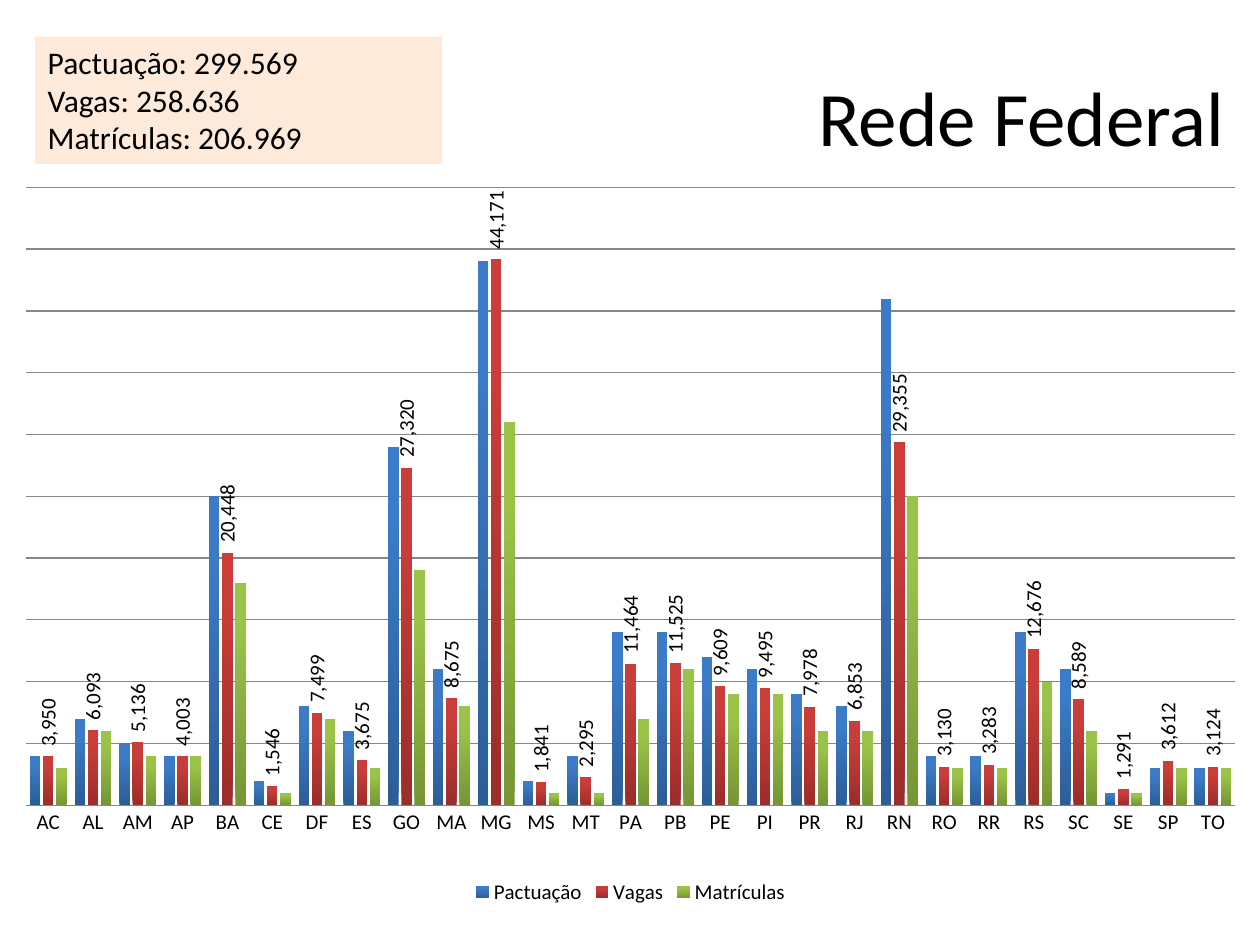
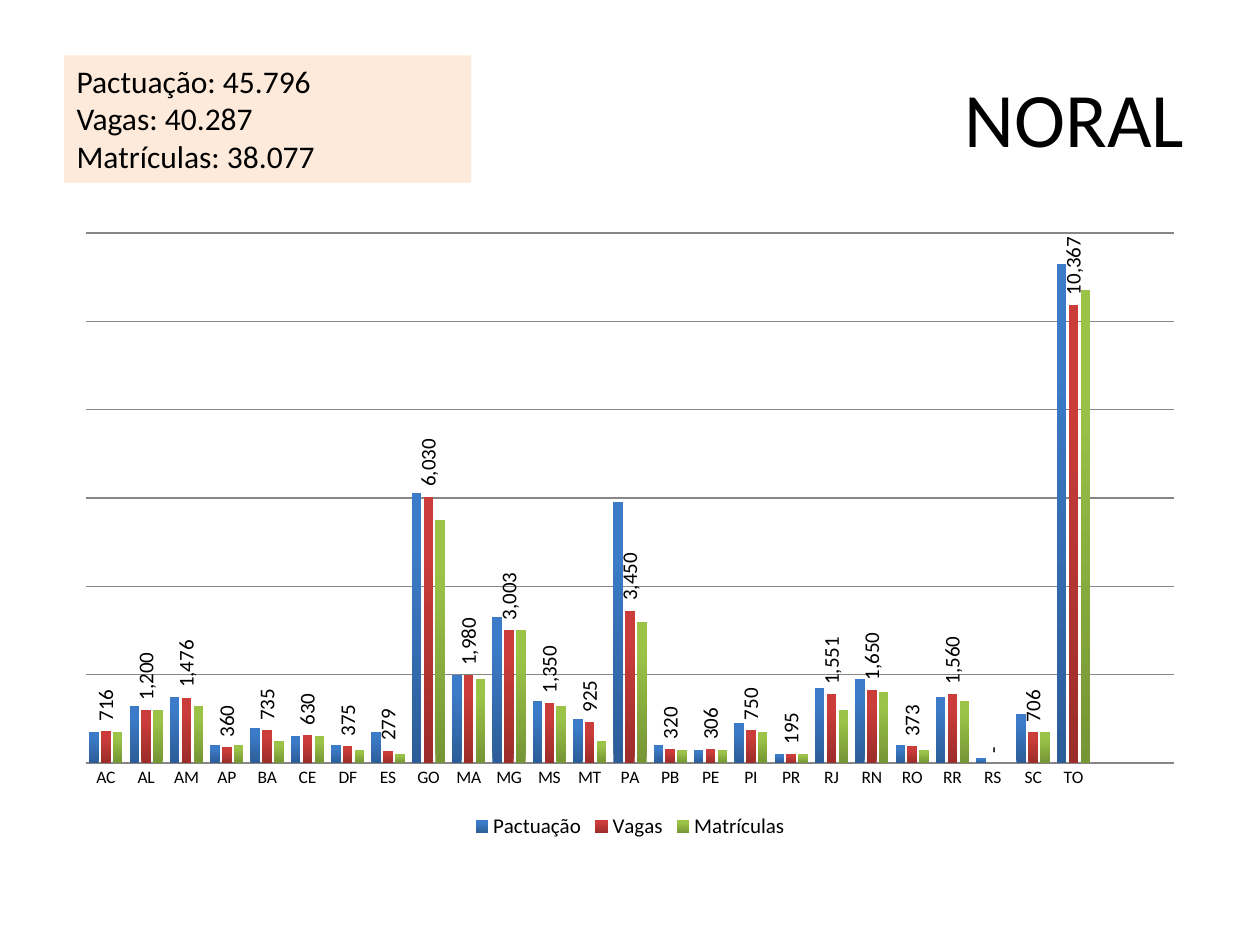
from dataclasses import dataclass

from pptx import Presentation
from pptx.chart.data import CategoryChartData
from pptx.dml.color import RGBColor
from pptx.enum.chart import XL_CHART_TYPE, XL_LABEL_POSITION, XL_LEGEND_POSITION, XL_TICK_MARK
from pptx.enum.text import MSO_ANCHOR, PP_ALIGN
from pptx.oxml import parse_xml
from pptx.oxml.ns import nsdecls, qn
from pptx.util import Pt


@dataclass(frozen=True)
class Theme:
    font: str = "Calibri"
    text: str = "000000"
    box_fill: str = "FDEADA"
    grid: str = "868686"
    # Bottom and top colour of the bars of each series
    bars: tuple = (("2C5D98", "3C7BC7"), ("9B2D2A", "CB3D3A"), ("769535", "9BC348"))
    title_size: int = 44
    box_size: int = 18
    label_size: int = 12
    small_size: int = 10
    number_format: str = r'_-* #,##0_-;\-* #,##0_-;_-* "-"??_-;_-@_-'


SERIES_NAMES = ("Pactuação", "Vagas", "Matrículas")
TITLE_ONLY = 5
BOX_SIZE = (232.5, 72.7)

FEDERAL_STATES = ("AC AL AM AP BA CE DF ES GO MA MG MS MT PA PB PE PI PR RJ RN "
                  "RO RR RS SC SE SP TO").split()
FEDERAL_VALUES = (
    (4000, 7000, 5000, 4000, 25000, 2000, 8000, 6000, 29000, 11000, 44000, 2000, 4000, 14000,
     14000, 12000, 11000, 9000, 8000, 41000, 4000, 4000, 14000, 11000, 1000, 3000, 3000),
    (3950, 6093, 5136, 4003, 20448, 1546, 7499, 3675, 27320, 8675, 44171, 1841, 2295, 11464,
     11525, 9609, 9495, 7978, 6853, 29355, 3130, 3283, 12676, 8589, 1291, 3612, 3124),
    (3000, 6000, 4000, 4000, 18000, 1000, 7000, 3000, 19000, 8000, 31000, 1000, 1000, 7000,
     11000, 9000, 9000, 6000, 6000, 25000, 3000, 3000, 10000, 6000, 1000, 3000, 3000),
)

# The axis keeps two free places on the right
NORAL_STATES = [state for state in FEDERAL_STATES if state not in ("SE", "SP")] + ["", ""]
NORAL_VALUES = (
    (700, 1300, 1500, 400, 800, 600, 400, 700, 6100, 2000, 3300, 1400, 1000, 5900,
     400, 300, 900, 200, 1700, 1900, 400, 1500, 100, 1100, 11300, None, None),
    (716, 1200, 1476, 360, 735, 630, 375, 279, 6030, 1980, 3003, 1350, 925, 3450,
     320, 306, 750, 195, 1551, 1650, 373, 1560, 0, 706, 10367, None, None),
    (700, 1200, 1300, 400, 500, 600, 300, 200, 5500, 1900, 3000, 1300, 500, 3200,
     300, 300, 700, 200, 1200, 1600, 300, 1400, 0, 700, 10700, None, None),
)


def place_plot(chart, x, y, width, height):
    """Fix the inner plot area, in fractions of the chart frame."""
    plot_area = chart.element.find(".//" + qn("c:plotArea"))
    layout = plot_area.find(qn("c:layout"))
    if layout is not None:
        plot_area.remove(layout)
    plot_area.insert(0, parse_xml(
        f'<c:layout {nsdecls("c")}><c:manualLayout><c:layoutTarget val="inner"/>'
        '<c:xMode val="edge"/><c:yMode val="edge"/>'
        f'<c:x val="{x}"/><c:y val="{y}"/><c:w val="{width}"/><c:h val="{height}"/>'
        '</c:manualLayout></c:layout>'))


class NetworkDeck:
    def __init__(self, theme):
        self.theme = theme
        self.deck = Presentation()
        self.deck.slide_width, self.deck.slide_height = Pt(720), Pt(540)
        self.page = None

    def add_page(self):
        self.page = self.deck.slides.add_slide(self.deck.slide_layouts[TITLE_ONLY])

    def style_font(self, font, size):
        font.name = self.theme.font
        font.size = Pt(size)
        font.color.rgb = RGBColor.from_string(self.theme.text)

    def add_title(self, text, left, top, width, height):
        title = self.page.shapes.title
        title.left, title.top, title.width, title.height = map(Pt, (left, top, width, height))
        title.text_frame.text = text
        title.text_frame.vertical_anchor = MSO_ANCHOR.MIDDLE
        para = title.text_frame.paragraphs[0]
        para.alignment = PP_ALIGN.RIGHT
        self.style_font(para.runs[0].font, self.theme.title_size)

    def add_totals_box(self, totals, left, top):
        box = self.page.shapes.add_textbox(*map(Pt, (left, top, *BOX_SIZE)))
        box.fill.solid()
        box.fill.fore_color.rgb = RGBColor.from_string(self.theme.box_fill)
        frame = box.text_frame
        frame.word_wrap = True
        frame.text = "\n".join(f"{name}: {total}" for name, total in zip(SERIES_NAMES, totals))
        for para in frame.paragraphs:
            self.style_font(para.runs[0].font, self.theme.box_size)

    def add_state_chart(self, states, values, frame, plot, axis_top, axis_step, state_size):
        data = CategoryChartData(number_format=self.theme.number_format)
        data.categories = states
        for name, numbers in zip(SERIES_NAMES, values):
            data.add_series(name, numbers)
        chart = self.page.shapes.add_chart(
            XL_CHART_TYPE.COLUMN_CLUSTERED, *map(Pt, frame), data).chart
        chart.has_title = False
        self.style_font(chart.font, self.theme.small_size)
        place_plot(chart, *plot)
        self.style_axes(chart, axis_top, axis_step, state_size)
        self.style_columns(chart.plots[0])
        self.add_upright_labels(chart)
        chart.has_legend = True
        chart.legend.position = XL_LEGEND_POSITION.BOTTOM
        chart.legend.include_in_layout = False
        self.style_font(chart.legend.font, self.theme.label_size)

    def style_axes(self, chart, axis_top, axis_step, state_size):
        state_axis, value_axis = chart.category_axis, chart.value_axis
        state_axis.major_tick_mark = XL_TICK_MARK.NONE
        self.style_font(state_axis.tick_labels.font, state_size)
        value_axis.visible = False
        value_axis.minimum_scale = 0
        value_axis.maximum_scale = axis_top
        value_axis.major_unit = axis_step
        value_axis.has_major_gridlines = True
        for line in (state_axis.format.line, value_axis.major_gridlines.format.line):
            line.width = Pt(0.7)
            line.color.rgb = RGBColor.from_string(self.theme.grid)

    def style_columns(self, plot):
        plot.gap_width, plot.overlap = 75, -25
        plot.vary_by_categories = False
        for series, colors in zip(plot.series, self.theme.bars):
            series.invert_if_negative = False
            fill = series.format.fill
            fill.gradient()
            fill.gradient_angle = 90
            for stop, color, position in zip(fill.gradient_stops, colors, (0, 0.8)):
                stop.color.rgb = RGBColor.from_string(color)
                stop.position = position

    def add_upright_labels(self, chart):
        """Label the bars of the series Vagas, reading upwards."""
        labels = chart.plots[0].series[SERIES_NAMES.index("Vagas")].data_labels
        labels.show_value = True
        labels.position = XL_LABEL_POSITION.OUTSIDE_END
        labels.number_format = self.theme.number_format
        labels.number_format_is_linked = False
        self.style_font(labels.font, self.theme.label_size)
        body = chart.element.find(f".//{qn('c:ser')}/{qn('c:dLbls')}//{qn('a:bodyPr')}")
        body.set("rot", "-5400000")
        body.set("vert", "horz")


def main():
    theme = Theme()
    network = NetworkDeck(theme)

    network.add_page()
    network.add_title("Rede Federal", 365.8, 20.9, 341.3, 90)
    network.add_state_chart(
        FEDERAL_STATES, FEDERAL_VALUES, frame=(14.4, 94.3, 691.9, 425.5),
        plot=(0, 0.03, 1, 0.83), axis_top=50000, axis_step=5000,
        state_size=theme.label_size)
    network.add_totals_box(("299.569", "258.636", "206.969"), 20.2, 20.9)

    network.add_page()
    network.add_title("NORAL", 399.6, 21.6, 284.4, 90)
    network.add_totals_box(("45.796", "40.287", "38.077"), 36.7, 31.7)
    network.add_state_chart(
        NORAL_STATES, NORAL_VALUES, frame=(36, 126, 648, 356.4),
        plot=(0.02, 0.02, 0.96, 0.85), axis_top=12000, axis_step=2000,
        state_size=theme.small_size)

    network.deck.save("out.pptx")


if __name__ == "__main__":
    main()
